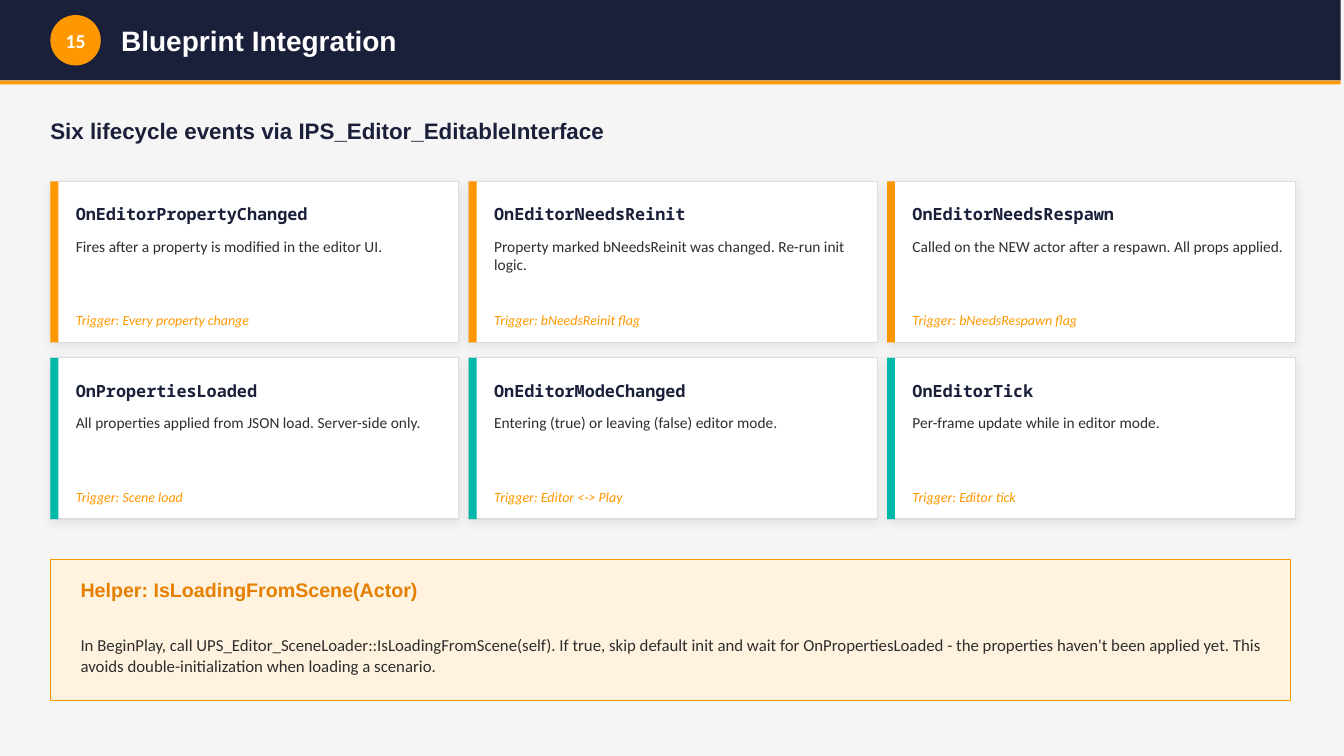
from lxml.etree import SubElement
from pptx import Presentation
from pptx.dml.color import RGBColor
from pptx.enum.shapes import MSO_SHAPE
from pptx.enum.text import MSO_ANCHOR, MSO_AUTO_SIZE, PP_ALIGN
from pptx.oxml.ns import qn
from pptx.util import Cm, Pt

NAVY = RGBColor(0x1A, 0x1F, 0x3A)
ORANGE = RGBColor(0xFF, 0x98, 0x00)
DARK_ORANGE = RGBColor(0xE6, 0x7E, 0x00)
CREAM = RGBColor(0xFF, 0xF3, 0xE0)
TEAL = RGBColor(0x00, 0xB8, 0xA9)
WHITE = RGBColor(0xFF, 0xFF, 0xFF)
BACKGROUND = RGBColor(0xF5, 0xF5, 0xF5)
BORDER = RGBColor(0xDD, 0xDD, 0xDD)
INK = RGBColor(0x2D, 0x2D, 0x2D)

BADGE = {"name": "Calibri", "size": Pt(14), "bold": True}
TITLE = {"name": "Arial", "size": Pt(20), "bold": True}
SUBTITLE = {"name": "Arial", "size": Pt(16), "bold": True}
EVENT_NAME = {"name": "Noto Sans Mono", "size": Pt(12), "bold": True}
DESCRIPTION = {"name": "Calibri", "size": Pt(11)}
TRIGGER = {"name": "Calibri", "size": Pt(10), "italic": True}
HELPER_TITLE = {"name": "Arial", "size": Pt(14), "bold": True}
HELPER_BODY = {"name": "Calibri", "size": Pt(12)}

MARGIN = 1.27
CONTENT_WIDTH = 31.24
CARD_WIDTH, CARD_HEIGHT = 10.29, 4.06
COLUMN_STEP, ROW_STEP = 10.54, 4.45
GRID_TOP = 4.57

EVENT_ROWS = [
    (ORANGE, [
        ("OnEditorPropertyChanged",
         "Fires after a property is modified in the editor UI.",
         "Every property change"),
        ("OnEditorNeedsReinit",
         "Property marked bNeedsReinit was changed. Re-run init logic.",
         "bNeedsReinit flag"),
        ("OnEditorNeedsRespawn",
         "Called on the NEW actor after a respawn. All props applied.",
         "bNeedsRespawn flag"),
    ]),
    (TEAL, [
        ("OnPropertiesLoaded",
         "All properties applied from JSON load. Server-side only.",
         "Scene load"),
        ("OnEditorModeChanged",
         "Entering (true) or leaving (false) editor mode.",
         "Editor <-> Play"),
        ("OnEditorTick",
         "Per-frame update while in editor mode.",
         "Editor tick"),
    ]),
]
HELPER_TEXT = (
    "In BeginPlay, call UPS_Editor_SceneLoader::IsLoadingFromScene(self). "
    "If true, skip default init and wait for OnPropertiesLoaded - the properties "
    "haven't been applied yet. This avoids double-initialization when loading a scenario."
)


def write_text(shape, text, font_format, color, anchor=MSO_ANCHOR.MIDDLE,
               alignment=PP_ALIGN.LEFT):
    """Write one formatted paragraph into a shape without insets."""
    frame_format = {
        "margin_left": 0, "margin_top": 0, "margin_right": 0, "margin_bottom": 0,
        "word_wrap": True, "auto_size": MSO_AUTO_SIZE.NONE, "vertical_anchor": anchor,
    }
    frame = shape.text_frame
    for name, value in frame_format.items():
        setattr(frame, name, value)
    paragraph = frame.paragraphs[0]
    paragraph.alignment = alignment
    run = paragraph.add_run()
    run.text = text
    for name, value in font_format.items():
        setattr(run.font, name, value)
    run.font.color.rgb = color


def add_text(slide, left, top, width, height, *content, **placement):
    """Add a text box, with lengths in centimetres."""
    shape = slide.shapes.add_textbox(Cm(left), Cm(top), Cm(width), Cm(height))
    write_text(shape, *content, **placement)


def add_block(slide, left, top, width, height, fill, line=None, line_width=1,
              kind=MSO_SHAPE.RECTANGLE):
    """Add a flat filled shape, with lengths in centimetres."""
    shape = slide.shapes.add_shape(kind, Cm(left), Cm(top), Cm(width), Cm(height))
    shape.shadow.inherit = False
    shape.fill.solid()
    shape.fill.fore_color.rgb = fill
    if line is None:
        shape.line.fill.background()
    else:
        shape.line.color.rgb = line
        shape.line.width = Pt(line_width)
    return shape


def add_soft_shadow(shape):
    """Give a shape a faint shadow that falls downwards."""
    effects = shape.element.spPr.find(qn("a:effectLst"))
    shadow = SubElement(effects, qn("a:outerShdw"), blurRad=str(Pt(8)),
                        dist=str(Pt(2)), dir="5400000", algn="ctr", rotWithShape="0")
    color = SubElement(shadow, qn("a:srgbClr"), val="000000")
    SubElement(color, qn("a:alpha"), val="8000")


def add_header(slide, left, top, width, height):
    """Place the title bar, its underline, the number badge and the title."""
    add_block(slide, left, top, width, height, NAVY)
    add_block(slide, left, top + height, width, 0.1, ORANGE)
    badge_size = 1.27
    badge_top = top + (height - badge_size) / 2
    badge = add_block(slide, left + MARGIN, badge_top, badge_size, badge_size, ORANGE,
                      kind=MSO_SHAPE.OVAL)
    write_text(badge, "15", BADGE, WHITE, alignment=PP_ALIGN.CENTER)
    title = slide.shapes.title
    title_format = {"left": Cm(left + 3.05), "top": Cm(badge_top),
                    "width": Cm(27.94), "height": Cm(badge_size)}
    for name, value in title_format.items():
        setattr(title, name, value)
    write_text(title, "Blueprint Integration", TITLE, WHITE)
    badge.element.addnext(title.element)


def add_event_card(slide, left, top, width, height, accent, event):
    """Place one lifecycle event card."""
    event_name, description, trigger = event
    card = add_block(slide, left, top, width, height, WHITE, BORDER, 0.75)
    add_soft_shadow(card)
    add_block(slide, left, top, 0.2, height, accent)
    text_left, text_width = left + 0.64, width - 0.89
    add_text(slide, text_left, top + 0.38, text_width, 0.89, event_name, EVENT_NAME, NAVY)
    add_text(slide, text_left, top + 1.4, text_width, 1.65, description, DESCRIPTION, INK,
             anchor=MSO_ANCHOR.TOP)
    add_text(slide, text_left, top + 3.18, text_width, 0.64, f"Trigger: {trigger}",
             TRIGGER, ORANGE)


def add_event_grid(slide, left, top):
    """Place the event cards in rows and columns."""
    for row, (accent, events) in enumerate(EVENT_ROWS):
        for column, event in enumerate(events):
            add_event_card(slide, left + column * COLUMN_STEP, top + row * ROW_STEP,
                           CARD_WIDTH, CARD_HEIGHT, accent, event)


def add_helper_panel(slide, left, top, width, height):
    """Place the panel that explains the helper function."""
    add_block(slide, left, top, width, height, CREAM, ORANGE)
    text_left, text_width = left + 0.76, width - 0.76
    add_text(slide, text_left, top + 0.25, text_width, 1.02,
             "Helper: IsLoadingFromScene(Actor)", HELPER_TITLE, DARK_ORANGE)
    add_text(slide, text_left, top + 1.27, text_width, height - 1.27, HELPER_TEXT,
             HELPER_BODY, INK)


def main():
    """Build and save the presentation."""
    presentation = Presentation()
    presentation.slide_width = Cm(33.86)
    presentation.slide_height = Cm(19.05)
    slide = presentation.slides.add_slide(presentation.slide_layouts[5])
    slide.background.fill.solid()
    slide.background.fill.fore_color.rgb = BACKGROUND
    add_header(slide, 0, 0, 33.78, 2.03)
    add_text(slide, MARGIN, 2.79, CONTENT_WIDTH, 1.02,
             "Six lifecycle events via IPS_Editor_EditableInterface", SUBTITLE, NAVY)
    add_event_grid(slide, MARGIN, GRID_TOP)
    add_helper_panel(slide, MARGIN, 14.1, CONTENT_WIDTH, 3.56)
    presentation.save("out.pptx")


if __name__ == "__main__":
    main()
